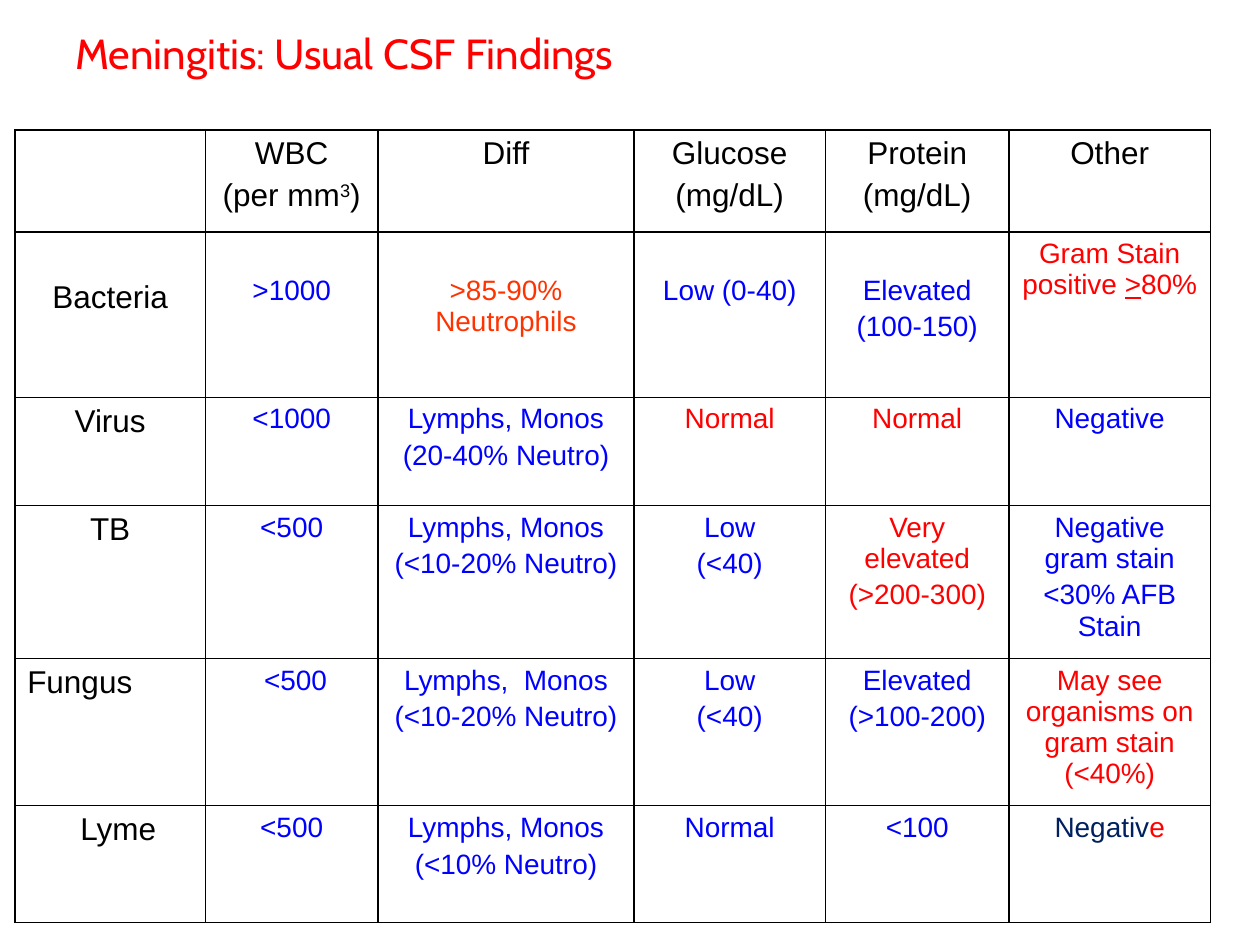
from lxml.etree import SubElement
from pptx import Presentation
from pptx.dml.color import RGBColor
from pptx.enum.text import PP_ALIGN
from pptx.oxml.ns import qn
from pptx.util import Cm, Pt

BLACK = RGBColor(0, 0, 0)
RED = RGBColor(0xFF, 0, 0)
ORANGE = RGBColor(0xFF, 0x33, 0)
BLUE = RGBColor(0, 0, 0xFF)
NAVY = RGBColor(0, 0x20, 0x60)

TITLE = "Meningitis: Usual CSF Findings"
COLUMN_WIDTHS = [3.84, 3.48, 5.16, 3.86, 3.7, 4.06]
ROW_HEIGHTS = [2.06, 3.33, 2.18, 2.95, 2.82, 2.36]

# A cell is a list of lines; a line is a text or a list of (text, format) spans.
HEADER = [
    [],
    ["WBC", [("(per mm", {}), ("3", {"baseline": 30}), (")", {})]],
    ["Diff"],
    ["Glucose", "(mg/dL)"],
    ["Protein", "(mg/dL)"],
    ["Other"],
]
FINDINGS = [
    [["Bacteria"], [">1000"], [">85-90% Neutrophils"], ["Low (0-40)"],
     ["Elevated", "(100-150)"],
     [[("Gram Stain positive ", {}), (">", {"underline": True}), ("80%", {})]]],
    [["Virus"], ["<1000"], ["Lymphs, Monos", "(20-40% Neutro)"],
     ["Normal"], ["Normal"], ["Negative"]],
    [["TB"], ["<500"], ["Lymphs, Monos", "(<10-20% Neutro)"],
     ["Low", "(<40)"], ["Very elevated", "(>200-300)"],
     ["Negative gram stain", "<30% AFB Stain"]],
    [["Fungus"], [" <500"], ["Lymphs,  Monos", "(<10-20% Neutro)"],
     ["Low", "(<40)"], ["Elevated", "(>100-200)"],
     ["May see organisms on gram stain (<40%)"]],
    [["Lyme"], ["<500"], ["Lymphs, Monos", "(<10% Neutro)"],
     ["Normal"], ["<100"],
     [[("Negativ", {"color": NAVY}), ("e", {"color": RED})]]],
]

# Exceptions by (row, column); findings are blue and centred otherwise.
CELL_COLORS = {(1, 2): ORANGE, (1, 5): RED, (2, 3): RED, (2, 4): RED,
               (3, 4): RED, (4, 5): RED}
LEFT_INDENTS = {(4, 0): 0.25, (5, 0): 1.32}
TOP_MARGINS = {(1, 0): 0.97, **{(1, column): 0.86 for column in range(1, 5)}}


def write(frame, lines, size, color, font="Arial", align=PP_ALIGN.CENTER):
    frame.word_wrap = True
    for index, line in enumerate(lines):
        para = frame.add_paragraph() if index else frame.paragraphs[0]
        para.alignment = align
        para.space_before = Pt(0.2 * size)
        for text, style in [(line, {})] if isinstance(line, str) else line:
            span = para.add_run()
            span.text = text
            span.font.name = font
            span.font.size = Pt(size)
            span.font.bold = False
            span.font.color.rgb = style.get("color", color)
            if "underline" in style:
                span.font.underline = True
            if "baseline" in style:
                span.font._element.set("baseline", str(style["baseline"] * 1000))


def outline(cell):
    """Give the cell a thin black border on all sides and no fill."""
    properties = cell._tc.get_or_add_tcPr()
    for side in ("a:lnL", "a:lnR", "a:lnT", "a:lnB"):
        line = SubElement(properties, qn(side), w=str(Pt(1)))
        SubElement(SubElement(line, qn("a:solidFill")), qn("a:srgbClr"), val=str(BLACK))
    cell.fill.background()


def add_findings(page):
    rows = [HEADER] + FINDINGS
    table = page.shapes.add_table(
        len(rows), len(HEADER), Cm(0.3), Cm(2.62),
        Cm(sum(COLUMN_WIDTHS)), Cm(sum(ROW_HEIGHTS))).table
    table.first_row = table.horz_banding = False
    for column, width in zip(table.columns, COLUMN_WIDTHS):
        column.width = Cm(width)
    for row, height in zip(table.rows, ROW_HEIGHTS):
        row.height = Cm(height)

    for r, row in enumerate(rows):
        for c, lines in enumerate(row):
            cell = table.cell(r, c)
            place = (r, c)
            is_label = r == 0 or c == 0
            cell.margin_left = Cm(LEFT_INDENTS.get(place, 0.25))
            cell.margin_right = Cm(0.25)
            cell.margin_top = Cm(TOP_MARGINS.get(place, 0.13))
            cell.margin_bottom = Cm(0.13)
            outline(cell)
            write(cell.text_frame, lines,
                  size=18 if is_label else 16,
                  color=BLACK if is_label else CELL_COLORS.get(place, BLUE),
                  align=PP_ALIGN.LEFT if place in LEFT_INDENTS else PP_ALIGN.CENTER)


def main():
    deck = Presentation()
    deck.slide_width, deck.slide_height = Cm(25.4), Cm(19.05)
    page = deck.slides.add_slide(deck.slide_layouts[6])
    box = page.shapes.add_textbox(Cm(1.27), Cm(0.43), Cm(18.62), Cm(3.18))
    write(box.text_frame, [TITLE], size=24, color=RED, font="Cabin", align=PP_ALIGN.LEFT)
    add_findings(page)
    deck.save("out.pptx")


if __name__ == "__main__":
    main()
